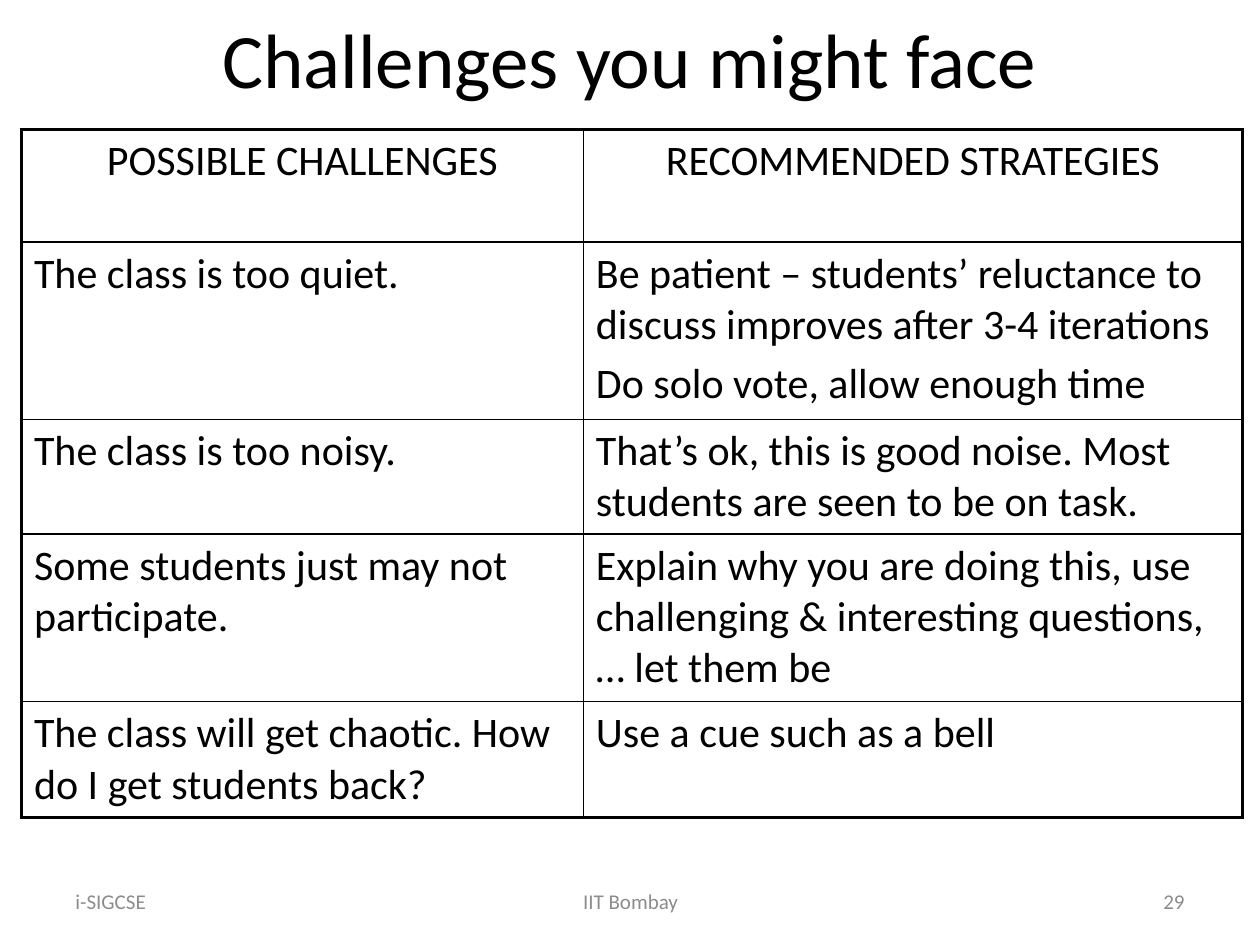
from lxml import etree
from pptx import Presentation
from pptx.dml.color import RGBColor
from pptx.enum.text import MSO_ANCHOR, PP_ALIGN
from pptx.oxml.ns import qn
from pptx.util import Inches, Pt

LEFT, CENTER, RIGHT = PP_ALIGN.LEFT, PP_ALIGN.CENTER, PP_ALIGN.RIGHT
MIDDLE = MSO_ANCHOR.MIDDLE

FONT = "Calibri"
COLORS = {"text": "000000", "border": "000000", "footer": "8C8C8C"}
OUTER_BORDER, INNER_BORDER = 2.25, 1

COLUMN_WIDTHS = [4.46, 5.23]
ROW_HEIGHTS = [0.89, 1.41, 0.91, 1.33, 0.92]
CHALLENGES = [
    ("POSSIBLE CHALLENGES", "RECOMMENDED STRATEGIES"),
    ("The class is too quiet.",
     "Be patient – students’ reluctance to discuss improves after 3-4 iterations\n"
     "Do solo vote, allow enough time"),
    ("The class is too noisy.",
     "That’s ok, this is good noise. Most students are seen to be on task."),
    ("Some students just may not participate.",
     "Explain why you are doing this, use challenging & interesting questions, … let them be"),
    ("The class will get chaotic. How do I get students back?",
     "Use a cue such as a bell"),
]
FOOTERS = [
    ("i-SIGCSE", 0.5, 2.33, LEFT),
    ("IIT Bombay", 3.42, 3.17, CENTER),
    ("29", 7.17, 2.33, RIGHT),
]


def write_text(frame, text, size, color, align):
    frame.text = text
    for index, paragraph in enumerate(frame.paragraphs):
        paragraph.alignment = align
        if index:
            paragraph.space_before = Pt(size * 0.2)
        for run in paragraph.runs:
            run.font.name = FONT
            run.font.size = Pt(size)
            run.font.color.rgb = RGBColor.from_string(COLORS[color])


def add_label(slide, text, left, top, width, height, size, color, align):
    label = slide.shapes.add_textbox(
        Inches(left), Inches(top), Inches(width), Inches(height))
    frame = label.text_frame
    frame.word_wrap = True
    frame.vertical_anchor = MIDDLE
    write_text(frame, text, size, color, align)


def set_borders(cell, outer_edges):
    properties = cell._tc.get_or_add_tcPr()
    for edge, is_outer in outer_edges.items():
        width = OUTER_BORDER if is_outer else INNER_BORDER
        line = etree.SubElement(properties, qn(f"a:ln{edge}"), w=str(Pt(width)))
        fill = etree.SubElement(line, qn("a:solidFill"))
        etree.SubElement(fill, qn("a:srgbClr"), val=COLORS["border"])


def add_challenge_table(slide, left, top):
    last_row, last_column = len(ROW_HEIGHTS) - 1, len(COLUMN_WIDTHS) - 1
    table = slide.shapes.add_table(
        len(ROW_HEIGHTS), len(COLUMN_WIDTHS), Inches(left), Inches(top),
        Inches(sum(COLUMN_WIDTHS)), Inches(sum(ROW_HEIGHTS))).table
    table.first_row = False
    table.horz_banding = False
    for column, width in zip(table.columns, COLUMN_WIDTHS):
        column.width = Inches(width)
    for row, height in zip(table.rows, ROW_HEIGHTS):
        row.height = Inches(height)
    for r, texts in enumerate(CHALLENGES):
        for c, text in enumerate(texts):
            cell = table.cell(r, c)
            write_text(cell.text_frame, text, 24, "text", LEFT if r else CENTER)
            set_borders(cell, {"L": c == 0, "R": c == last_column,
                               "T": r == 0, "B": r == last_row})
            cell.fill.background()


def main():
    deck = Presentation()
    deck.slide_width, deck.slide_height = Inches(10), Inches(7.5)
    slide = deck.slides.add_slide(deck.slide_layouts[6])
    add_label(slide, "Challenges you might face", 0.5, 0, 9, 0.92, 44, "text", CENTER)
    add_challenge_table(slide, 0.17, 1.03)
    for text, left, width, align in FOOTERS:
        add_label(slide, text, left, 6.95, width, 0.4, 12, "footer", align)
    deck.save("out.pptx")


if __name__ == "__main__":
    main()
